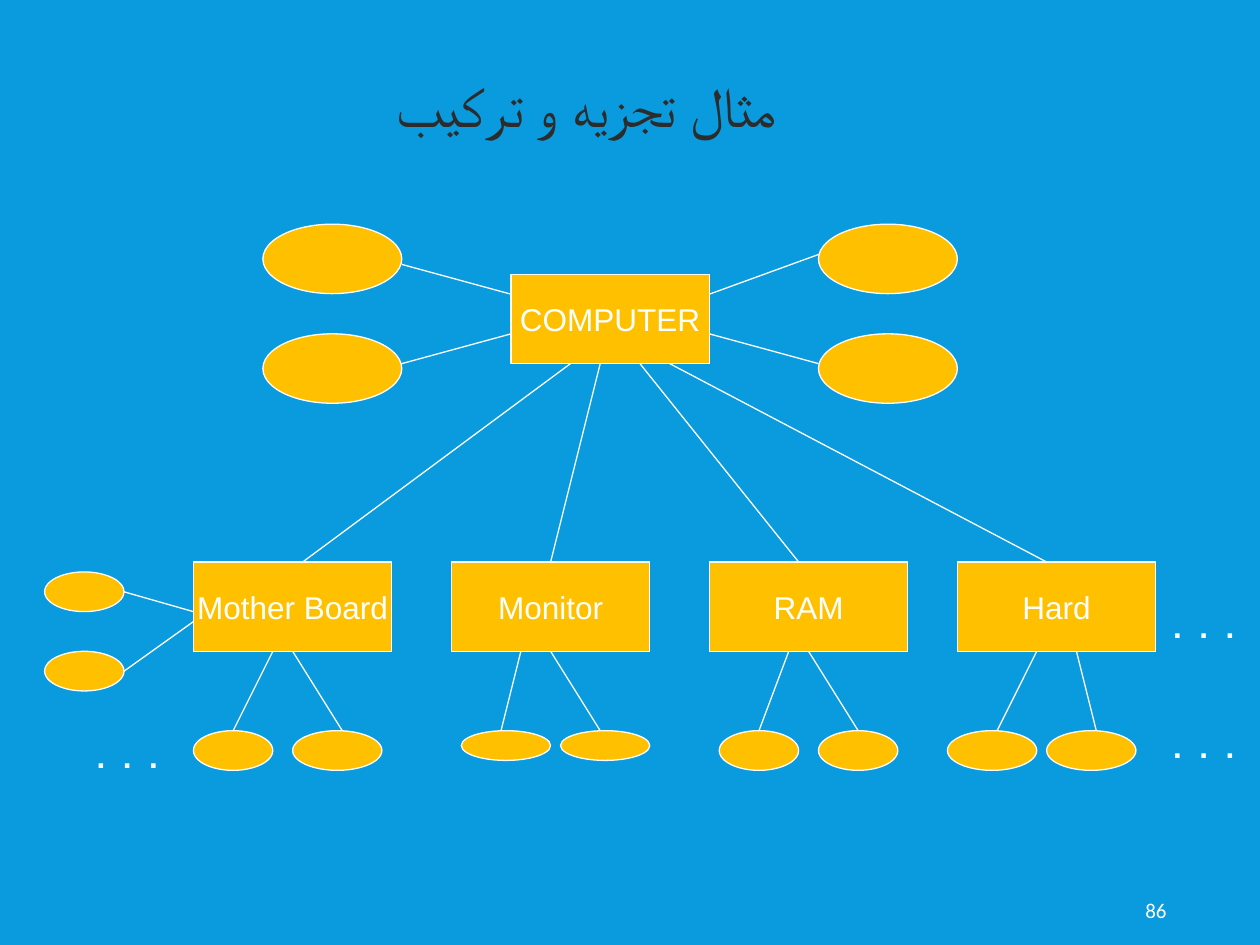
from dataclasses import dataclass
from math import isclose
from lxml.etree import SubElement
from pptx import Presentation
from pptx.dml.color import RGBColor
from pptx.enum.shapes import MSO_CONNECTOR, MSO_SHAPE
from pptx.enum.text import MSO_ANCHOR, MSO_AUTO_SIZE, PP_ALIGN
from pptx.oxml.ns import qn
from pptx.util import Cm, Pt


@dataclass
class Theme:
    background = RGBColor.from_string("099BDD")
    accent = RGBColor.from_string("FFC000")
    light = RGBColor.from_string("FFFFFF")
    dark = RGBColor.from_string("2C2C2C")
    line = Pt(0.75)
    title = Pt(32)
    body = Pt(18)
    number = Pt(12)


theme = Theme()
label_font = {"name": "Arial", "size": theme.body}
dots_font = {**label_font, "bold": True}
title_font = {"name": "Lato", "size": theme.title, "bold": False}
number_font = {"name": "Calibri", "size": theme.number}


def write(sp, text, font, color, frame, align=PP_ALIGN.LEFT):
    tf = sp.text_frame
    for name, value in frame.items():
        setattr(tf, name, value)
    p = tf.paragraphs[0]
    p.alignment = align
    r = p.add_run()
    r.text = text
    for name, value in font.items():
        setattr(r.font, name, value)
    r.font.color.rgb = color
    return p


def add_node(kind, left, top, width, height):
    sp = s.shapes.add_shape(kind, Cm(left), Cm(top), Cm(width), Cm(height))
    sp.shadow.inherit = False
    sp.fill.solid()
    sp.fill.fore_color.rgb = theme.accent
    sp.line.color.rgb = theme.light
    sp.line.width = theme.line
    return sp


prs = Presentation()
prs.slide_width, prs.slide_height = Cm(25.4), Cm(19.05)
s = prs.slides.add_slide(prs.slide_layouts[5])
s.background.fill.solid()
s.background.fill.fore_color.rgb = theme.background

title = s.shapes.title
title.left, title.top, title.width, title.height = Cm(6.9), Cm(1.32), Cm(9), Cm(1.63)
title_frame = {"word_wrap": True, "vertical_anchor": MSO_ANCHOR.TOP,
               "auto_size": MSO_AUTO_SIZE.SHAPE_TO_FIT_TEXT}
p = write(title, "مثال تجزيه و تركيب", title_font, theme.dark, title_frame, PP_ALIGN.RIGHT)
p._p.get_or_add_pPr().set("rtl", "1")

box_w, box_h = 4, 1.8
root_left, root_top, part_top, leaf_top = 10.3, 5.53, 11.33, 14.73
root_bottom, part_bottom = root_top + box_h, part_top + box_h

for left in (5.3, 16.5):
    for top in (4.52, 6.73):
        add_node(MSO_SHAPE.OVAL, left, top, 2.8, 1.4)
for top in (11.53, 13.13):
    add_node(MSO_SHAPE.OVAL, 0.9, top, 1.6, 0.8)

links = [
    (8.1, 5.33, root_left, 5.93),
    (16.5, 5.13, root_left + box_w, 5.93),
    (8.1, root_bottom, root_left, 6.73),
    (16.5, root_bottom, root_left + box_w, 6.73),
    (2.5, 11.93, 3.9, 12.33),
    (2.5, 13.53, 3.9, 12.53),
]

parts = [
    ("Mother Board", 3.9, 11.5, 6.1, 0.8, [(3.9, 1.6, 5.5, 4.7), (5.9, 1.8, 5.9, 6.9)]),
    ("Monitor", 9.1, 12.1, 11.1, 0.6, [(9.3, 1.8, 10.5, 10.1), (11.3, 1.8, 11.1, 12.1)]),
    ("RAM", 14.3, 12.9, 16.1, 0.8, [(14.5, 1.6, 15.9, 15.3), (16.5, 1.6, 16.3, 17.3)]),
    ("Hard", 19.3, 13.5, 21.1, 0.8, [(19.1, 1.8, 20.9, 20.1), (21.1, 1.8, 21.7, 22.1)]),
]
boxes = [("COMPUTER", root_left, root_top)]
for label, left, start_x, end_x, leaf_h, leaves in parts:
    boxes.append((label, left, part_top))
    links.append((start_x, root_bottom, end_x, part_top))
    for leaf_left, leaf_w, leaf_start, leaf_end in leaves:
        add_node(MSO_SHAPE.OVAL, leaf_left, leaf_top, leaf_w, leaf_h)
        links.append((leaf_start, part_bottom, leaf_end, leaf_top))

sites = []
box_frame = {"word_wrap": False, "vertical_anchor": MSO_ANCHOR.MIDDLE}
for label, left, top in boxes:
    sp = add_node(MSO_SHAPE.RECTANGLE, left, top, box_w, box_h)
    write(sp, label, label_font, theme.light, box_frame, PP_ALIGN.CENTER)
    mid_x, mid_y = left + box_w / 2, top + box_h / 2
    sites += [(sp, 0, mid_x, top), (sp, 1, left, mid_y),
              (sp, 2, mid_x, top + box_h), (sp, 3, left + box_w, mid_y)]

for x1, y1, x2, y2 in links:
    cn = s.shapes.add_connector(MSO_CONNECTOR.STRAIGHT, Cm(x1), Cm(y1), Cm(x2), Cm(y2))
    cn.line.color.rgb = theme.light
    cn.line.width = theme.line
    SubElement(cn._element.spPr, qn("a:effectLst"))
    for connect, x, y in ((cn.begin_connect, x1, y1), (cn.end_connect, x2, y2)):
        for sp, site, site_x, site_y in sites:
            if isclose(x, site_x) and isclose(y, site_y):
                connect(sp, site)

dots_frame = {"word_wrap": True, "auto_size": MSO_AUTO_SIZE.SHAPE_TO_FIT_TEXT}
for left, top in ((23.4, 14.53), (23.4, 12.12), (1.7, 14.73)):
    sp = s.shapes.add_textbox(Cm(left), Cm(top), Cm(2), Cm(1.02))
    write(sp, ".  .  .", dots_font, theme.light, dots_frame)

number_frame = {"word_wrap": True, "vertical_anchor": MSO_ANCHOR.MIDDLE, "margin_left": Cm(0.13)}
sp = s.shapes.add_textbox(Cm(22.96), Cm(17.83), Cm(1.98), Cm(1.02))
write(sp, "86", number_font, theme.light, number_frame)

prs.save("out.pptx")
